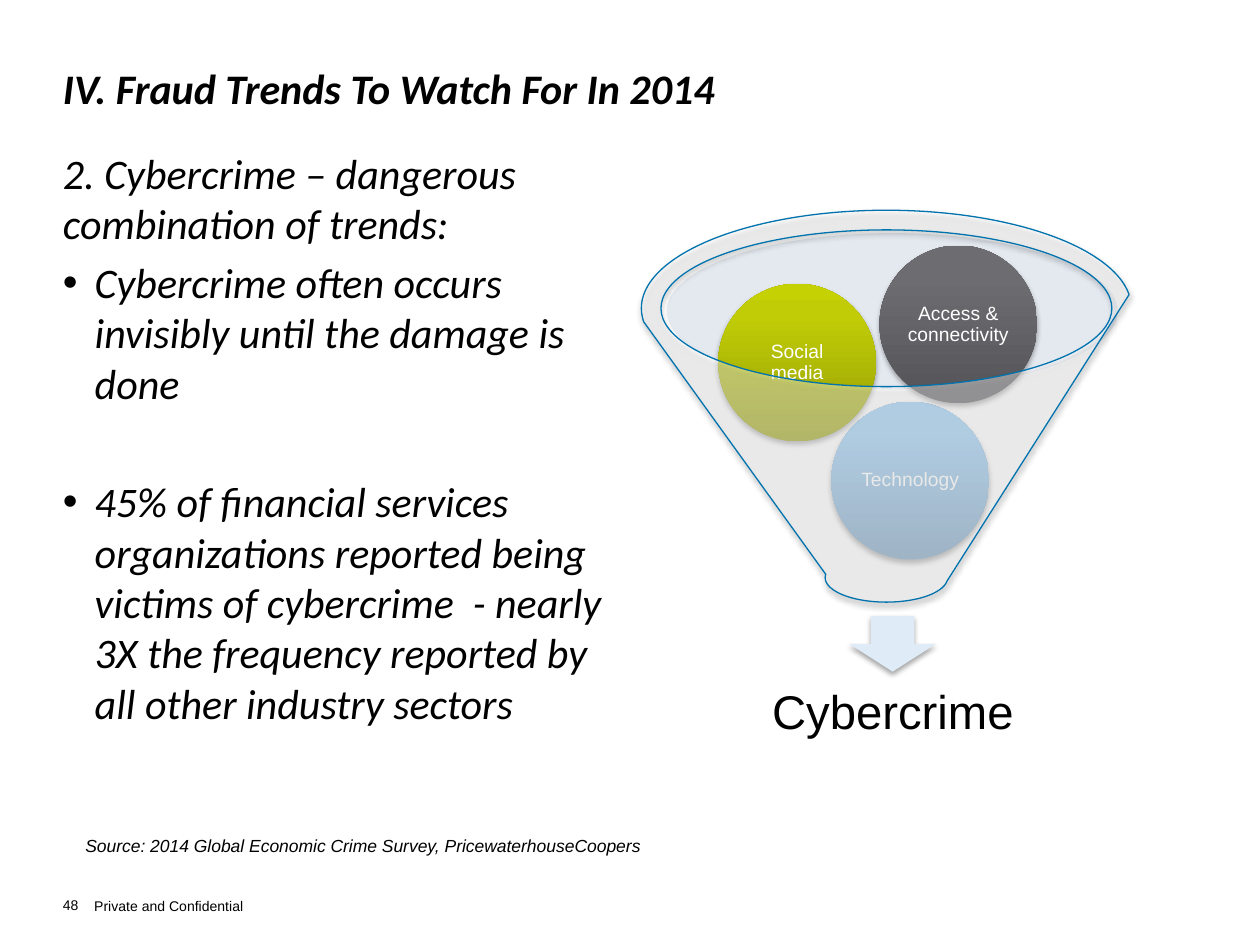
from copy import deepcopy

from lxml.etree import SubElement
from pptx import Presentation
from pptx.dml.color import RGBColor
from pptx.enum.shapes import MSO_SHAPE as Preset
from pptx.enum.text import MSO_ANCHOR as Anchor, PP_ALIGN as Align
from pptx.oxml.ns import qn
from pptx.util import Cm, Pt

BULLET_INDENT = Cm(0.64)


def rgb(hex_color):
    return RGBColor.from_string(hex_color)


def add_alpha(color_parent, percent):
    """Set the opacity of the colour inside an XML element."""
    SubElement(color_parent.find(qn("a:srgbClr")), qn("a:alpha"), val=str(percent * 1000))


class FunnelSlide:
    """Holds the style and the slide that is being filled."""

    heading_font = "Calibri"
    small_font = "Arial"
    ink = "000000"

    def __init__(self, deck):
        self.slide = deck.slides.add_slide(deck.slide_layouts[6])

    def run(self, paragraph, words, size, font, color=ink, bold=False, italic=False):
        run = paragraph.add_run()
        run.text = words
        run.font.size, run.font.name = Pt(size), font
        run.font.bold, run.font.italic = bold, italic
        run.font.color.rgb = rgb(color)

    def frame(self, holder, inset=0.0, anchor=Anchor.TOP, wrap=True):
        frame = holder.text_frame
        frame.margin_left = frame.margin_right = Cm(inset)
        frame.margin_top = frame.margin_bottom = Cm(inset)
        frame.vertical_anchor, frame.word_wrap = anchor, wrap
        return frame

    def box(self, place, **layout):
        return self.frame(self.slide.shapes.add_textbox(*map(Cm, place)), **layout)

    def line(self, place, words, size, font, bold=False, italic=False, **layout):
        paragraph = self.box(place, **layout).paragraphs[0]
        self.run(paragraph, words, size, font, bold=bold, italic=italic)

    def bullet(self, paragraph):
        props = paragraph._p.get_or_add_pPr()
        props.set("marL", str(BULLET_INDENT))
        props.set("indent", str(-BULLET_INDENT))
        SubElement(props, qn("a:buFont"), typeface=self.small_font)
        SubElement(props, qn("a:buChar"), char="•")

    def body(self, place, items):
        """Items are (words, bulleted, space before in points)."""
        frame = self.box(place)
        for number, (words, bulleted, space) in enumerate(items):
            paragraph = frame.add_paragraph() if number else frame.paragraphs[0]
            paragraph.space_before = Pt(space)
            if bulleted:
                self.bullet(paragraph)
            self.run(paragraph, words, 24, self.heading_font, italic=True)

    def centred(self, frame, words, size, color):
        paragraph = frame.paragraphs[0]
        paragraph.alignment, paragraph.line_spacing = Align.CENTER, 0.9
        self.run(paragraph, words, size, self.small_font, color)

    def shape(self, preset, place, fill=None, opacity=None, line=None, shadow=True):
        shape = self.slide.shapes.add_shape(preset, *map(Cm, place))
        props = shape._element.spPr
        if fill:
            shape.fill.solid()
            shape.fill.fore_color.rgb = rgb(fill)
        if opacity:
            add_alpha(props.find(qn("a:solidFill")), opacity)
        if line:
            shape.line.color.rgb, shape.line.width = rgb(line), Pt(0.75)
        else:
            shape.line.fill.background()
        shape.shadow.inherit = False
        if shadow:
            outer = SubElement(props.find(qn("a:effectLst")), qn("a:outerShdw"),
                               blurRad=str(Pt(3.1)), dist=str(Pt(1.8)),
                               dir="5400000", rotWithShape="0")
            SubElement(outer, qn("a:srgbClr"), val="000000")
            add_alpha(outer, 35)
        return shape

    def ball(self, left, top, words, colors):
        ball = self.shape(Preset.OVAL, (left, top, 3.18, 3.18))
        ball.fill.gradient()
        stops = ball._element.spPr.find(".//" + qn("a:gsLst"))
        stops.append(deepcopy(stops[-1]))
        for stop, position, color in zip(ball.fill.gradient_stops, (0, 0.8, 1), colors):
            stop.position, stop.color.rgb = position, rgb(color)
        ball.fill.gradient_angle = 90
        self.centred(self.frame(ball, 0.05, Anchor.MIDDLE), words, 11, "FFFFFF")


def main():
    deck = Presentation()
    deck.slide_width, deck.slide_height = Cm(25.4), Cm(19.05)
    page = FunnelSlide(deck)
    arial = page.small_font

    page.line((1.9, 18.08, 3.05, 0.36), "Private and Confidential", 8, arial,
              anchor=Anchor.BOTTOM, wrap=False)
    page.line((1.27, 17.81, 0.79, 0.61), "48", 8, arial, anchor=Anchor.BOTTOM)
    page.line((1.27, 1.27, 22.86, 1.9), "IV. Fraud Trends To Watch For In 2014", 24,
              page.heading_font, bold=True, italic=True)
    page.body((1.27, 2.97, 11, 12.7), [
        ("2. Cybercrime – dangerous combination of trends:", False, 0),
        ("Cybercrime often occurs invisibly until the damage is done", True, 4.8),
        ("45% of financial services organizations reported being victims of "
         "cybercrime  - nearly 3X the frequency reported by all other industry "
         "sectors", True, 38.9),
    ])

    page.shape(Preset.OVAL, (13.44, 4.7, 9.09, 3.15), "BDC9DB", 40, shadow=False)
    page.shape(Preset.DOWN_ARROW, (17.12, 12.42, 1.75, 1.12), "DFECF8")
    outcome = page.box((13.77, 13.34, 8.46, 2.11), inset=0.53, anchor=Anchor.MIDDLE)
    page.centred(outcome, "Cybercrime", 27, page.ink)
    for left, top, trend, colors in (
        (16.76, 8.1, "Technology", ("6F98B9", "90C6F1", "8FC7F4")),
        (14.48, 5.72, "Social media", ("949D05", "C1CC06", "C5D102")),
        (17.73, 4.95, "Access & connectivity", ("545357", "6D6C71", "6E6C72")),
    ):
        page.ball(left, top, trend, colors)
    page.shape(Preset.FUNNEL, (12.93, 4.24, 9.88, 7.9), "FFFFFF", 40, line="0073AE")

    page.line((1.72, 16.84, 15.8, 0.43),
              "Source: 2014 Global Economic Crime Survey, PricewaterhouseCoopers",
              10, arial, italic=True)
    deck.save("out.pptx")


if __name__ == "__main__":
    main()
